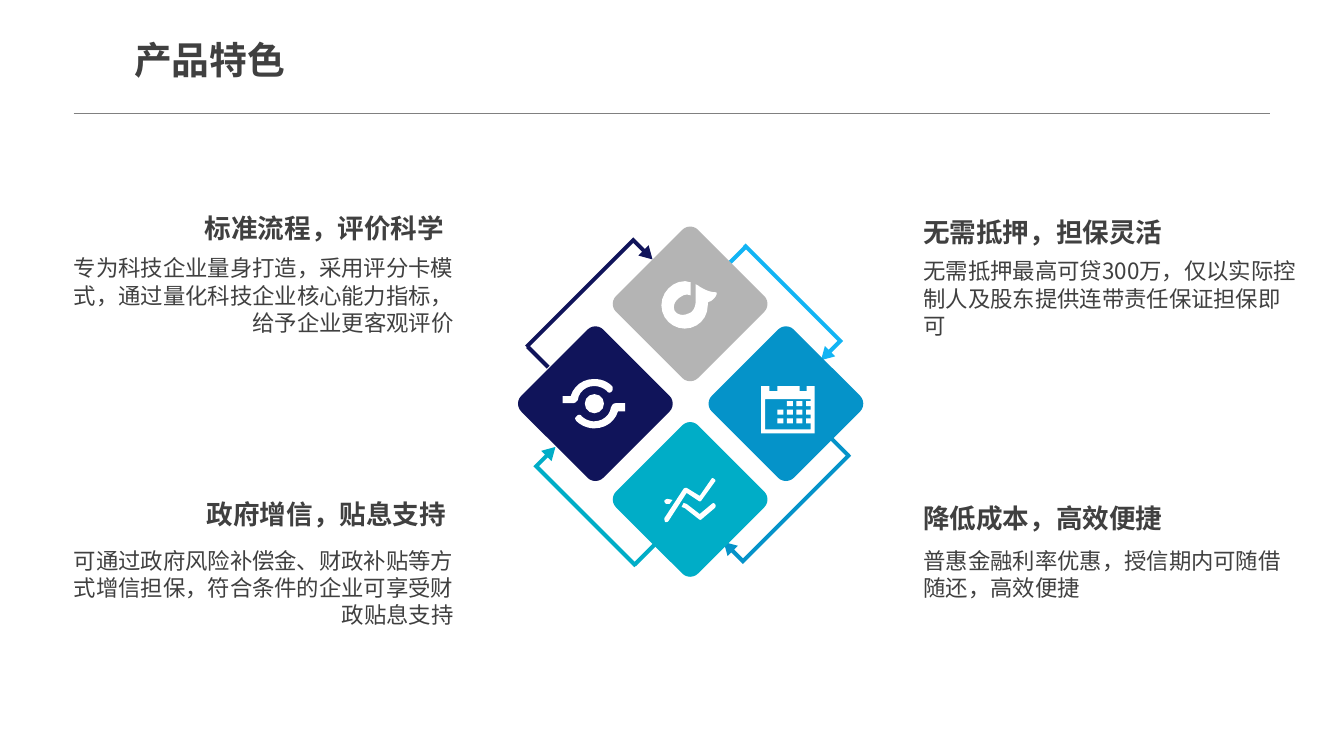
from lxml.etree import SubElement
from pptx import Presentation
from pptx.dml.color import RGBColor
from pptx.enum.shapes import MSO_CONNECTOR, MSO_SHAPE
from pptx.enum.text import MSO_ANCHOR, PP_ALIGN
from pptx.oxml.ns import qn
from pptx.util import Inches, Pt

FONT = "Noto Sans CJK SC"
DARK, WHITE = "404040", "FFFFFF"
NAVY, TEAL, SKY, BLUE, GREY = "10145A", "00ADC7", "12B4F4", "0593C9", "B4B4B4"
LEFT, RIGHT = PP_ALIGN.LEFT, PP_ALIGN.RIGHT

# heading, heading box, body, body box, alignment
FEATURES = [
    ("无需抵押，担保灵活", (9.06, 2.11, 3.8, 0.37),
     "无需抵押最高可贷300万，仅以实际控制人及股东提供连带责任保证担保即可",
     (9.16, 2.55, 3.7, 0.81), LEFT),
    ("降低成本，高效便捷", (9.06, 4.95, 3.8, 0.37),
     "普惠金融利率优惠，授信期内可随借随还，高效便捷",
     (9.16, 5.42, 3.7, 0.54), LEFT),
    ("政府增信，贴息支持", (1.64, 4.95, 2.88, 0.29),
     "可通过政府风险补偿金、财政补贴等方式增信担保，符合条件的企业可享受财政贴息支持",
     (0.6, 5.42, 3.9, 0.81), RIGHT),
    ("标准流程，评价科学", (0.58, 2.11, 3.92, 0.29),
     "专为科技企业量身打造，采用评分卡模式，通过量化科技企业核心能力指标，给予企业更客观评价",
     (0.58, 2.52, 3.92, 0.81), RIGHT),
]

# arrow box, tail bar position, rotation, arrow flips, bar flips, colour
ARROWS = [
    ((5.72, 2.19, 0.29, 1.57), (5.19, 3.52), 45, "", "V", NAVY),
    ((5.73, 4.27, 0.29, 1.47), (6.25, 5.48), 315, "", "V", TEAL),
    ((7.65, 2.31, 0.29, 1.42), (7.15, 2.53), 315, "HV", "H", SKY),
    ((7.64, 4.19, 0.29, 1.57), (8.17, 4.4), 45, "HV", "H", BLUE),
]

DIAMONDS = [(7.22, 3.43, BLUE), (6.27, 4.38, TEAL), (5.33, 3.43, NAVY), (6.27, 2.44, GREY)]

# Icon contours in hundredths of an inch: pairs are corners, sextets are cubic curves.
CALENDAR = [
    [(808, 383), (800, 383), (800, 388), (793, 388), (793, 383), (771, 383),
     (771, 388), (763, 388), (763, 383), (755, 383), (755, 430), (808, 430)],
    [(804, 426), (759, 426), (759, 396), (804, 396)],
]
TREND = [
    [(681, 489), (693, 497), (694, 498, 696, 497, 696, 496), (709, 478),
     (710, 477, 710, 476, 708, 475), (707, 474, 706, 474, 705, 476), (694, 492),
     (681, 484), (680, 484, 679, 484, 678, 485), (659, 514),
     (659, 516, 659, 517, 660, 518), (661, 518, 662, 518, 663, 517)],
    [(706, 500), (694, 510), (681, 500), (678, 499), (676, 503), (679, 504), (693, 515),
     (694, 516, 695, 516, 696, 515), (709, 504), (710, 503, 710, 501, 709, 500),
     (708, 499, 707, 499, 706, 500)],
    [(661, 500), (664, 500), (667, 496), (662, 495), (661, 495, 659, 496, 659, 497),
     (659, 498, 659, 499, 661, 500)],
]
ORBIT = [
    [(611, 400), (607, 400, 607, 403, 606, 404), (605, 412, 598, 418, 589, 418),
     (585, 418, 580, 416, 577, 413), (576, 411, 573, 411, 572, 413),
     (570, 414, 570, 416, 572, 418), (576, 422, 583, 425, 589, 425),
     (601, 425, 610, 418, 613, 408), (620, 408), (620, 400)],
    [(573, 397), (574, 389, 581, 383, 589, 383), (594, 383, 599, 385, 602, 388),
     (603, 390, 606, 390, 607, 388), (608, 387, 608, 384, 607, 383),
     (602, 378, 596, 376, 589, 376), (578, 376, 569, 383, 566, 393), (558, 393),
     (558, 400), (568, 400), (571, 400, 572, 398, 573, 397)],
]
MUSIC = [
    [(702, 300), (709, 298, 713, 290, 710, 290), (703, 290, 696, 286, 692, 283),
     (690, 282), (690, 299), (690, 305, 687, 310, 683, 311),
     (677, 314, 671, 312, 669, 308), (667, 303, 670, 297, 676, 294),
     (679, 292, 682, 292, 685, 293), (685, 280), (683, 280, 681, 279, 679, 279),
     (667, 279, 656, 290, 656, 303), (656, 316, 667, 326, 679, 326),
     (692, 326, 702, 316, 702, 303), (702, 302, 702, 301, 702, 300)],
]


def rgb(value):
    return RGBColor.from_string(value)


def paint(sp, color):
    sp.shadow.inherit = False
    sp.fill.solid()
    sp.fill.fore_color.rgb = rgb(color)
    sp.line.fill.background()


def add_text(s, text, box, size, *, bold=False, align=LEFT, anchor=MSO_ANCHOR.TOP,
             margins=(0.1, 0.05), wrap=True):
    tf = s.shapes.add_textbox(*map(Inches, box)).text_frame
    tf.word_wrap = wrap
    tf.vertical_anchor = anchor
    tf.margin_left = tf.margin_right = Inches(margins[0])
    tf.margin_top = tf.margin_bottom = Inches(margins[1])
    p = tf.paragraphs[0]
    p.alignment = align
    p.line_spacing = Pt(round(size * 1.22, 1))
    r = p.add_run()
    r.text = text
    r.font.size, r.font.bold, r.font.name = Pt(size), bold, FONT
    r.font.color.rgb = rgb(DARK)
    SubElement(r.font._element, qn("a:ea"), typeface=FONT)


def add_shape(s, kind, box, color, *, rotation=0, flips="", adjustments=()):
    sp = s.shapes.add_shape(kind, *map(Inches, box))
    paint(sp, color)
    sp.rotation = rotation
    for axis in flips:
        sp._element.spPr.xfrm.set("flip" + axis, "1")
    for i, value in enumerate(adjustments):
        sp.adjustments[i] = value


def add_rule(s, x1, x2, y):
    line = s.shapes.add_connector(MSO_CONNECTOR.STRAIGHT, *map(Inches, (x1, y, x2, y)))
    line.line.color.rgb = rgb("808080")
    line.line.width = Pt(0.25)
    SubElement(line._element.spPr, qn("a:effectLst"))


def flatten(contour, steps=6):
    """Turn the curves of a contour into short straight segments."""
    points = []
    for item in contour:
        if len(item) == 2:
            points.append(item)
            continue
        x0, y0 = points[-1]
        x1, y1, x2, y2, x3, y3 = item
        for k in range(1, steps + 1):
            t = k / steps
            a, b, c, d = (1 - t) ** 3, 3 * t * (1 - t) ** 2, 3 * t * t * (1 - t), t ** 3
            points.append((a * x0 + b * x1 + c * x2 + d * x3,
                           a * y0 + b * y1 + c * y2 + d * y3))
    return [(Inches(x / 100), Inches(y / 100)) for x, y in points]


def add_icon(s, contours):
    first, *others = map(flatten, contours)
    builder = s.shapes.build_freeform(*first[0])
    builder.add_line_segments(first[1:])
    for points in others:
        builder.move_to(*points[0])
        builder.add_line_segments(points[1:])
    paint(builder.convert_to_shape(), WHITE)


def add_calendar_days(s):
    for row in range(3):
        for col in range(4):
            if (row, col) != (0, 0):
                box = (7.71 + 0.095 * col, 3.98 + 0.085 * row, 0.06, 0.05)
                add_shape(s, MSO_SHAPE.RECTANGLE, box, WHITE)


def main():
    prs = Presentation()
    prs.slide_width, prs.slide_height = Inches(13.33), Inches(7.5)
    s = prs.slides.add_slide(prs.slide_layouts[6])

    add_rule(s, 0.73, 12.6, 1.12)
    add_text(s, "产品特色", (1.2, 0.29, 1.78, 0.59), 27, bold=True,
             margins=(0.13, 0.07), wrap=False)
    for box, bar, rotation, flips, bar_flips, color in ARROWS:
        add_shape(s, MSO_SHAPE.BENT_ARROW, box, color, rotation=rotation, flips=flips,
                  adjustments=(0.137, 0.25, 0.436, 0))
        add_shape(s, MSO_SHAPE.RECTANGLE, (*bar, 0.29, 0.04), color,
                  rotation=rotation, flips=bar_flips)
    for heading, heading_box, body, body_box, align in FEATURES:
        add_text(s, heading, heading_box, 19, bold=True, align=align,
                 anchor=MSO_ANCHOR.MIDDLE)
        add_text(s, body, body_box, 16, align=align, margins=(0, 0))
    for x, y, color in DIAMONDS:
        add_shape(s, MSO_SHAPE.ROUNDED_RECTANGLE, (x, y, 1.15, 1.15), color,
                  rotation=315, flips="V", adjustments=(0.096,))
    for icon in (CALENDAR, TREND, ORBIT, MUSIC):
        add_icon(s, icon)
    add_calendar_days(s)
    add_shape(s, MSO_SHAPE.OVAL, (5.8, 3.91, 0.19, 0.19), WHITE)

    prs.save("out.pptx")


if __name__ == "__main__":
    main()
